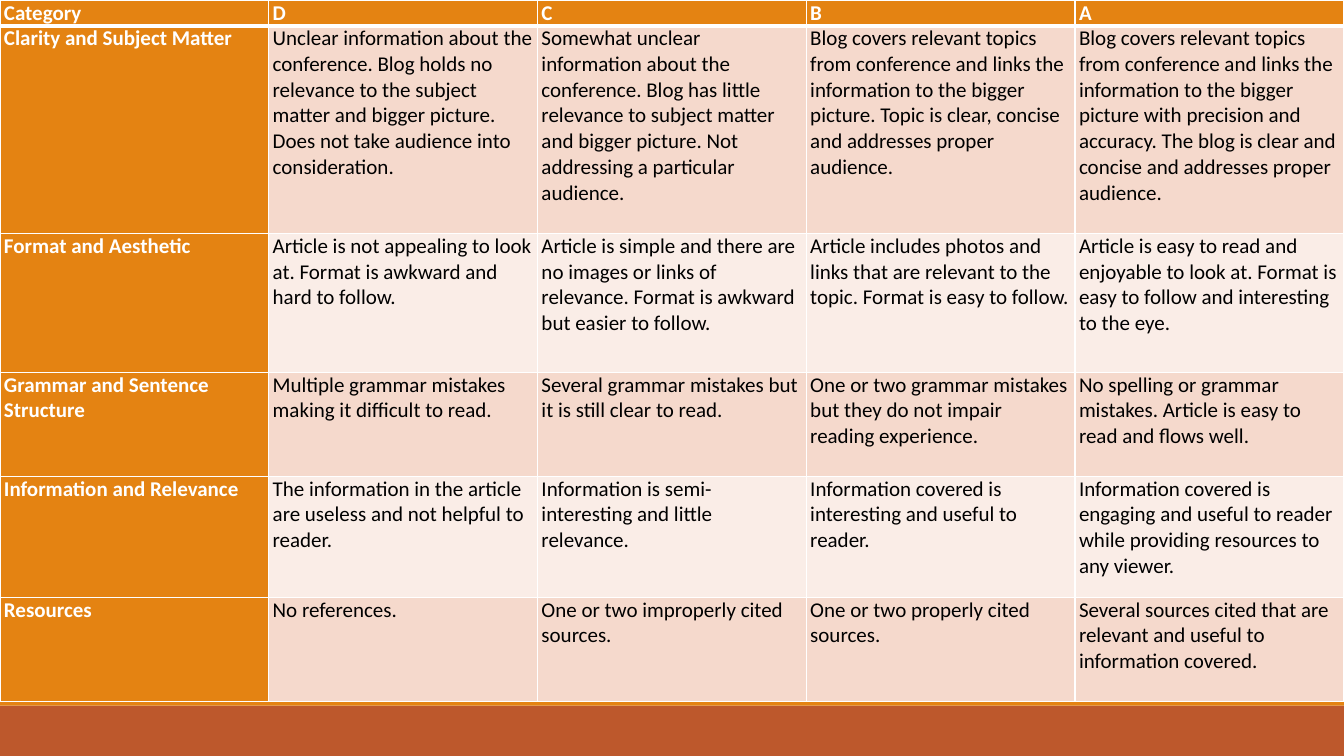
from lxml import etree
from pptx import Presentation
from pptx import util as u
from pptx.dml.color import RGBColor
from pptx.enum import shapes
from pptx.oxml.ns import qn

SLIDE_WIDTH, SLIDE_HEIGHT = 33.87, 19.05
COLORS = {
    "orange": "E48312",
    "rust": "BD582C",
    "band_dark": "F5D9CC",
    "band_light": "FAEDE7",
    "white": "FFFFFF",
    "black": "000000",
}

RUBRIC = [
    ["Category", "D", "C", "B", "A"],
    [
        "Clarity and Subject Matter",
        "Unclear information about the conference. Blog holds no relevance to the subject "
        "matter and bigger picture. Does not take audience into consideration.",
        "Somewhat unclear information about the conference. Blog has little relevance to "
        "subject matter and bigger picture. Not addressing a particular audience.",
        "Blog covers relevant topics from conference and links the information to the bigger "
        "picture. Topic is clear, concise and addresses proper audience.",
        "Blog covers relevant topics from conference and links the information to the bigger "
        "picture with precision and accuracy. The blog is clear and concise and addresses "
        "proper audience.",
    ],
    [
        "Format and Aesthetic",
        "Article is not appealing to look at. Format is awkward and hard to follow.",
        "Article is simple and there are no images or links of relevance. Format is awkward "
        "but easier to follow.",
        "Article includes photos and links that are relevant to the topic. Format is easy to "
        "follow.",
        "Article is easy to read and enjoyable to look at. Format is easy to follow and "
        "interesting to the eye.",
    ],
    [
        "Grammar and Sentence Structure",
        "Multiple grammar mistakes making it difficult to read.",
        "Several grammar mistakes but it is still clear to read.",
        "One or two grammar mistakes but they do not impair reading experience.",
        "No spelling or grammar mistakes. Article is easy to read and flows well.",
    ],
    [
        "Information and Relevance",
        "The information in the article are useless and not helpful to reader.",
        "Information is semi-interesting and little relevance.",
        "Information covered is interesting and useful to reader.",
        "Information covered is engaging and useful to reader while providing resources to "
        "any viewer.",
    ],
    [
        "Resources",
        "No references.",
        "One or two improperly cited sources.",
        "One or two properly cited sources.",
        "Several sources cited that are relevant and useful to information covered.",
    ],
]
ROW_HEIGHTS = [0.64, 5.23, 3.5, 2.62, 3.05, 2.62]


class SlideBuilder:
    def __init__(self, slide, font="Calibri", size=15):
        self.slide = slide
        self.font = font
        self.size = size

    def color(self, name):
        return RGBColor.from_string(COLORS[name])

    def bar(self, top, height, fill):
        shape = self.slide.shapes.add_shape(
            shapes.MSO_SHAPE.RECTANGLE, 0, u.Cm(top), u.Cm(SLIDE_WIDTH), u.Cm(height))
        shape.shadow.inherit = False
        shape.fill.solid()
        shape.fill.fore_color.rgb = self.color(fill)
        shape.line.fill.background()

    def borders(self, cell, widths):
        properties = cell._tc.get_or_add_tcPr()
        for index, (side, width) in enumerate(widths.items()):
            line = etree.Element(qn(f"a:ln{side}"), w=str(u.Pt(width)))
            fill = etree.SubElement(line, qn("a:solidFill"))
            etree.SubElement(fill, qn("a:srgbClr"), val=COLORS["white"])
            properties.insert(index, line)

    def cell(self, cell, content, fill, color, bold):
        cell.margin_left = cell.margin_right = u.Cm(0.1)
        cell.margin_top = cell.margin_bottom = 0
        cell.fill.solid()
        cell.fill.fore_color.rgb = self.color(fill)
        run = cell.text_frame.paragraphs[0].add_run()
        run.text = content
        run.font.name = self.font
        run.font.size = u.Pt(self.size)
        run.font.bold = bold
        run.font.color.rgb = self.color(color)

    def table(self, rows, heights):
        column_count = len(rows[0])
        table = self.slide.shapes.add_table(
            len(rows), column_count, 0, 0, u.Cm(SLIDE_WIDTH), u.Cm(sum(heights))).table
        table.first_col = True
        for column in table.columns:
            column.width = u.Cm(SLIDE_WIDTH / column_count)
        for r, (contents, height) in enumerate(zip(rows, heights)):
            table.rows[r].height = u.Cm(height)
            band = "band_dark" if r % 2 else "band_light"
            # A heavier rule separates the header from the body
            widths = {"L": 1, "R": 1, "T": 3 if r == 1 else 1, "B": 3 if r == 0 else 1}
            for c, content in enumerate(contents):
                heading = r == 0 or c == 0
                cell = table.cell(r, c)
                self.cell(cell, content, "orange" if heading else band,
                          "white" if heading else "black", heading)
                self.borders(cell, widths)


def main():
    presentation = Presentation()
    presentation.slide_width = u.Cm(SLIDE_WIDTH)
    presentation.slide_height = u.Cm(SLIDE_HEIGHT)
    builder = SlideBuilder(presentation.slides.add_slide(presentation.slide_layouts[6]))

    # Footer bars
    builder.bar(17.78, 1.27, "rust")
    builder.bar(17.6, 0.18, "orange")

    # Grading rubric
    builder.table(RUBRIC, ROW_HEIGHTS)

    presentation.save("out.pptx")


if __name__ == "__main__":
    main()
